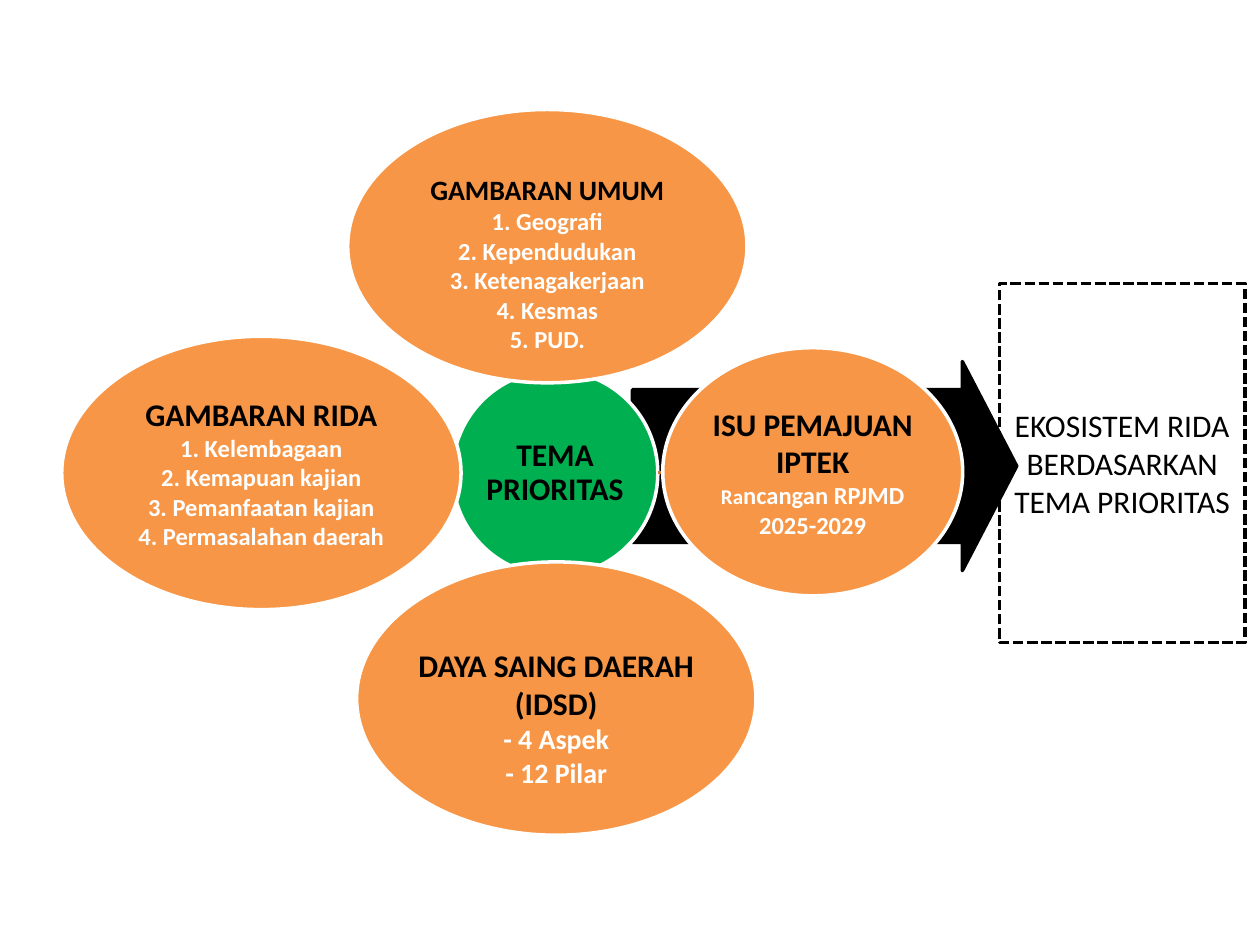
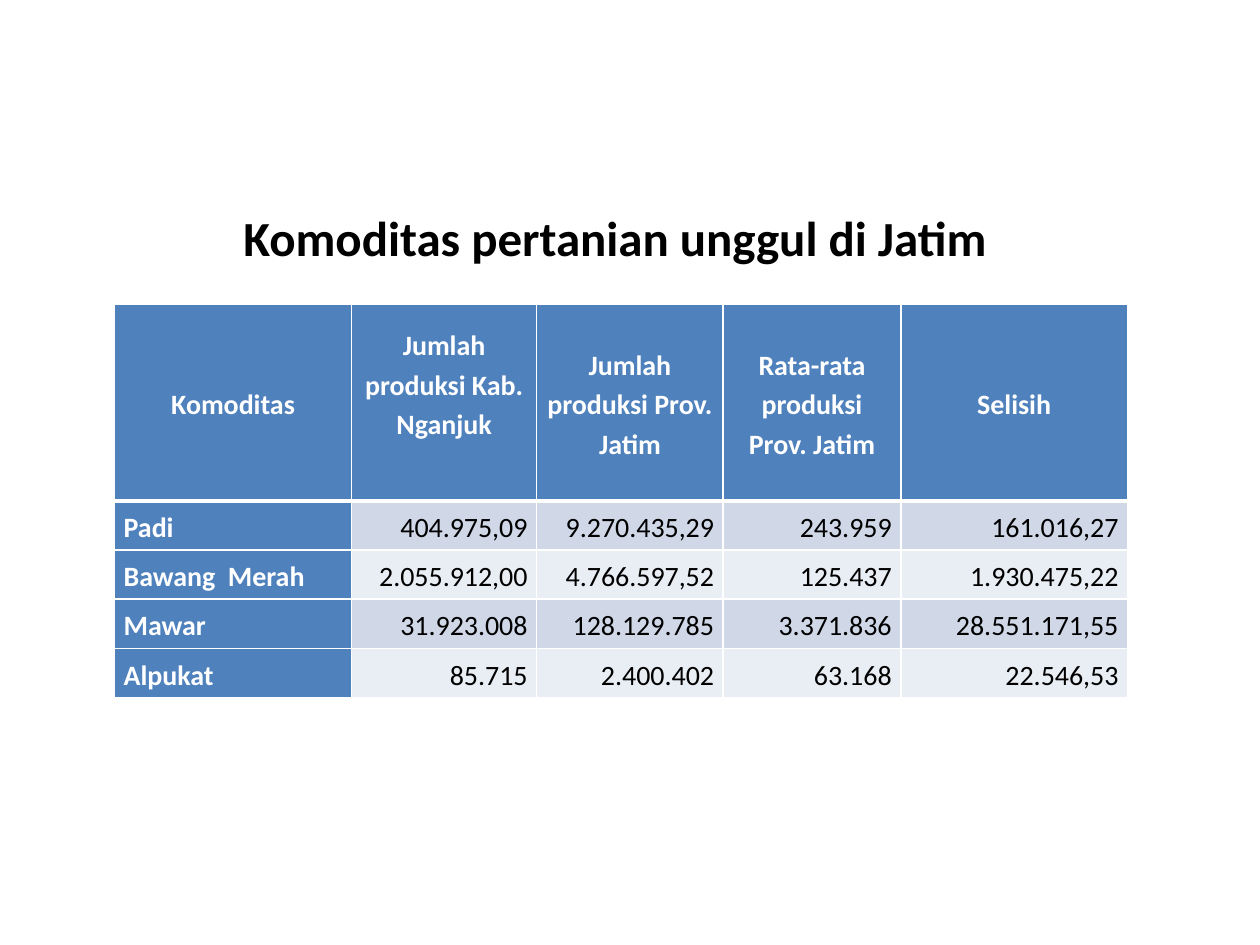
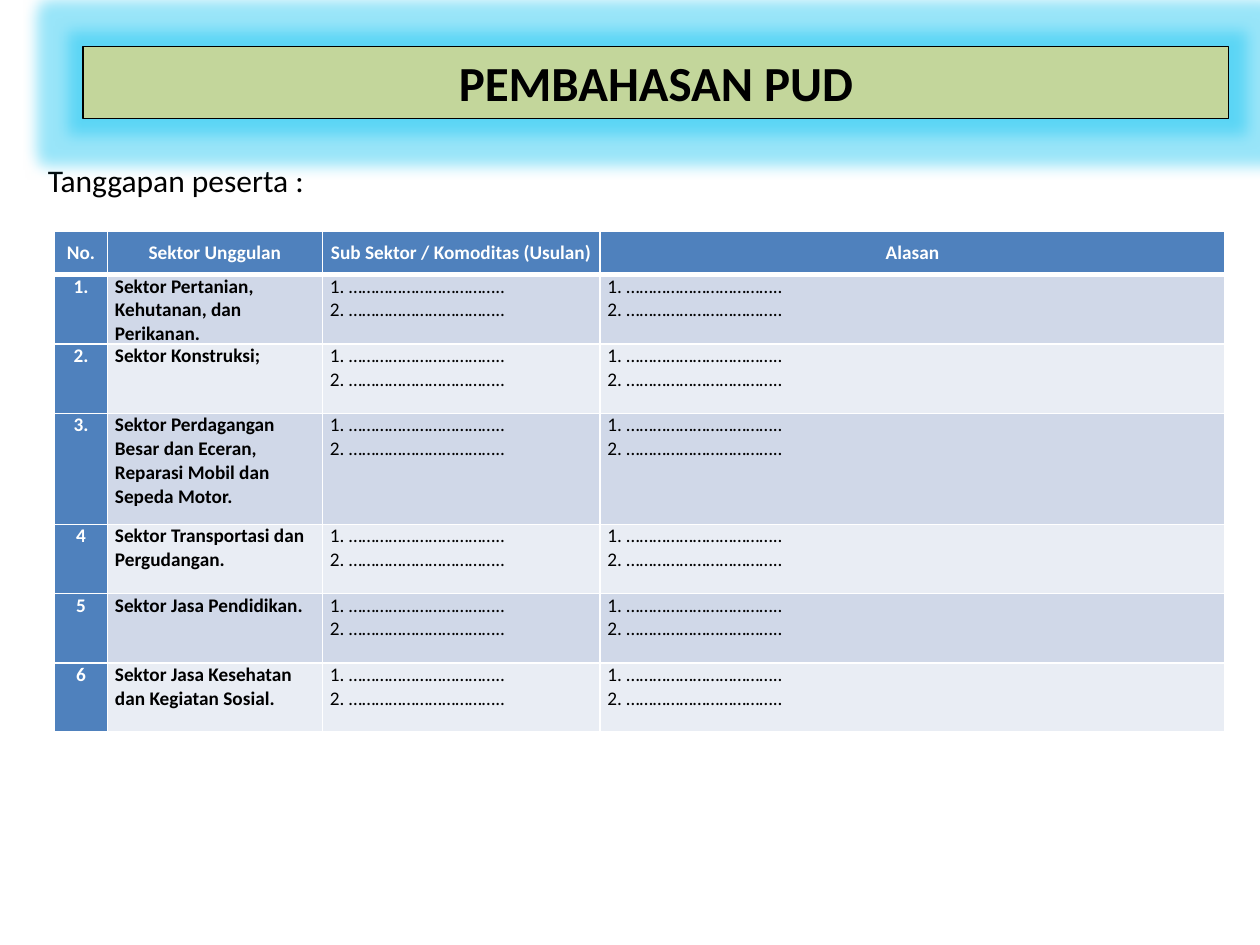
from dataclasses import dataclass
from typing import Any

from lxml import etree
from pptx import Presentation
from pptx import util as u
from pptx.dml.color import RGBColor
from pptx.enum import dml, shapes, text
from pptx.oxml import ns

Pt = u.Pt

# Shared look
FONT = "Calibri"
BLACK = RGBColor(0x00, 0x00, 0x00)
WHITE = RGBColor(0xFF, 0xFF, 0xFF)
ORANGE = RGBColor(0xF7, 0x96, 0x46)
GREEN = RGBColor(0x00, 0xB0, 0x50)
BROWN = RGBColor(0xC6, 0x78, 0x38)
BLUE = RGBColor(0x4F, 0x81, 0xBD)
BAND_DARK = RGBColor(0xD0, 0xD8, 0xE8)
BAND_LIGHT = RGBColor(0xE9, 0xED, 0xF4)
OLIVE = RGBColor(0xC3, 0xD6, 0x9B)
GLOW = RGBColor(0x00, 0xBF, 0xF0)

LEFT, CENTER, RIGHT = (text.PP_ALIGN.LEFT, text.PP_ALIGN.CENTER, text.PP_ALIGN.RIGHT)
TOP, MIDDLE = text.MSO_ANCHOR.TOP, text.MSO_ANCHOR.MIDDLE
SHAPE = shapes.MSO_SHAPE
TITLE_SIZE = 28


@dataclass(frozen=True)
class Box:
    left: float
    top: float
    width: float
    height: float

    def lengths(self) -> tuple:
        return Pt(self.left), Pt(self.top), Pt(self.width), Pt(self.height)


@dataclass(frozen=True)
class Run:
    words: str
    size: float
    color: RGBColor = BLACK
    bold: bool = True


@dataclass(frozen=True)
class Line:
    runs: tuple
    align: Any = CENTER
    spacing: float = 1.0


@dataclass(frozen=True)
class Bubble:
    box: Box
    color: RGBColor
    lines: tuple
    link: tuple = ()  # start x, start y, end x, end y
    top_inset: float = 0.72


@dataclass(frozen=True)
class CellStyle:
    size: float
    side_inset: float
    spacing: float
    body_anchor: Any
    aligns: tuple
    bold_columns: int


def line(words: str, size: float, color: RGBColor = BLACK, bold: bool = True,
         align: Any = CENTER, spacing: float = 1.0) -> Line:
    return Line((Run(words, size, color, bold),), align, spacing)


def apply(target: Any, values: dict) -> None:
    for name, value in values.items():
        setattr(target, name, value)


def write(frame: Any, lines: tuple, **frame_values: Any) -> None:
    apply(frame, {"word_wrap": True, **frame_values})
    for index, item in enumerate(lines):
        paragraph = frame.add_paragraph() if index else frame.paragraphs[0]
        apply(paragraph, {"alignment": item.align, "line_spacing": item.spacing})
        for part in item.runs:
            run = paragraph.add_run()
            run.text = part.words
            apply(run.font, {"name": FONT, "size": Pt(part.size), "bold": part.bold})
            run.font.color.rgb = part.color


def add_shape(slide: Any, kind: Any, box: Box, fill: RGBColor,
              outline: RGBColor, weight: float) -> Any:
    shape = slide.shapes.add_shape(kind, *box.lengths())
    shape.shadow.inherit = False
    shape.fill.solid()
    shape.fill.fore_color.rgb = fill
    shape.line.color.rgb = outline
    shape.line.width = Pt(weight)
    return shape


def add_text(slide: Any, box: Box, item: Line, wrap: bool = True) -> None:
    text_box = slide.shapes.add_textbox(*box.lengths())
    write(text_box.text_frame, (item,), word_wrap=wrap)


def add_link(slide: Any, ends: tuple) -> None:
    connector = slide.shapes.add_connector(
        shapes.MSO_CONNECTOR.STRAIGHT, *(Pt(value) for value in ends))
    connector.line.color.rgb = BROWN
    connector.line.width = Pt(2)
    etree.SubElement(connector._element.spPr, ns.qn("a:effectLst"))


def add_bubble(slide: Any, bubble: Bubble) -> None:
    if bubble.link:
        add_link(slide, bubble.link)
    shape = add_shape(slide, SHAPE.OVAL, bubble.box, bubble.color, WHITE, 2)
    inset = Pt(0.72)
    write(shape.text_frame, bubble.lines, vertical_anchor=MIDDLE,
          margin_left=inset, margin_right=inset, margin_bottom=inset,
          margin_top=Pt(bubble.top_inset))


def add_color(parent: Any, color: RGBColor) -> Any:
    return etree.SubElement(parent, ns.qn("a:srgbClr"), val=str(color))


def add_glow(shape: Any, color: RGBColor, radius: float, opacity: int) -> None:
    effects = shape._element.spPr.find(ns.qn("a:effectLst"))
    glow = etree.SubElement(effects, ns.qn("a:glow"), rad=str(Pt(radius)))
    etree.SubElement(add_color(glow, color), ns.qn("a:alpha"), val=str(opacity * 1000))


def set_borders(cell: Any, widths: dict) -> None:
    properties = cell._tc.get_or_add_tcPr()
    for side, width in widths.items():
        border = etree.SubElement(properties, ns.qn(f"a:ln{side}"), w=str(Pt(width)))
        add_color(etree.SubElement(border, ns.qn("a:solidFill")), WHITE)


def add_table(slide: Any, box: Box, widths: tuple, heights: tuple,
              rows: tuple, style: CellStyle) -> Any:
    frame = slide.shapes.add_table(len(rows), len(widths), *box.lengths())
    table = frame.table
    for column, width in zip(table.columns, widths):
        column.width = Pt(width)
    for row, height in zip(table.rows, heights):
        row.height = Pt(height)
    for r, values in enumerate(rows):
        for c, value in enumerate(values):
            header, key = r == 0, c == 0
            cell = table.cell(r, c)
            set_borders(cell, {"L": 1, "R": 1, "T": 3 if r == 1 else 1,
                               "B": 3 if header else 1})
            cell.fill.solid()
            band = BAND_DARK if r % 2 else BAND_LIGHT
            cell.fill.fore_color.rgb = BLUE if header or key else band
            apply(cell, {"margin_left": Pt(style.side_inset),
                         "margin_right": Pt(style.side_inset),
                         "margin_top": 0, "margin_bottom": 0,
                         "vertical_anchor": MIDDLE if header else style.body_anchor})
            color = WHITE if header or key else BLACK
            align = CENTER if header else style.aligns[c]
            write(cell.text_frame, tuple(
                line(words, style.size, color, header or c < style.bold_columns,
                     align, style.spacing) for words in value.split("\n")))
    return table


# Slide 1: priority theme diagram
def petal(left: float, top: float, heading: tuple, heading_size: float,
          items: tuple, item_size: float, link: tuple, top_inset: float = 0.72) -> Bubble:
    lines = (*(line(words, heading_size) for words in heading),
             *(line(words, item_size, WHITE) for words in items))
    return Bubble(Box(left, top, 228.2, 156.2), ORANGE, lines, link, top_inset)


BUBBLES = (
    Bubble(Box(258.5, 211.7, 117.4, 117.4), GREEN,
           (line("TEMA PRIORITAS", 18, spacing=0.9),)),
    petal(198.7, 62.6, ("GAMBARAN UMUM",), 16,
          ("1. Geografi", "2. Kependudukan", "3. Ketenagakerjaan",
           "4. Kesmas", "5. PUD."), 14, (315.4, 211.7, 315.4, 218.9), 20),
    Bubble(Box(378.7, 198.7, 171.4, 141.8), ORANGE,
           (line("ISU PEMAJUAN IPTEK", 18),
            Line((Run("Ra", 12, WHITE), Run("ncangan RPJMD", 14, WHITE))),
            line("2025-2029", 14, WHITE)), (375.8, 270, 378.7, 270)),
    petal(203.8, 321.1, ("DAYA SAING DAERAH", "(IDSD)"), 18,
          ("- 4 Aspek", "- 12 Pilar"), 16, (317.5, 328.3, 317.5, 321.1), 22.5),
    petal(35.3, 192.2, ("GAMBARAN RIDA",), 18,
          ("1. Kelembagaan", "2. Kemapuan kajian", "3. Pemanfaatan kajian",
           "4. Permasalahan daerah"), 14, (258.5, 270, 264.2, 270)),
)


def build_theme(slide: Any) -> None:
    ecosystem = add_shape(slide, SHAPE.RECTANGLE, Box(571, 162, 140.4, 205.2),
                          WHITE, BLACK, 2)
    ecosystem.line.dash_style = dml.MSO_LINE.SQUARE_DOT
    write(ecosystem.text_frame,
          (line("EKOSISTEM RIDA BERDASARKAN TEMA PRIORITAS", 18, bold=False),),
          vertical_anchor=MIDDLE)
    arrow = add_shape(slide, SHAPE.RIGHT_ARROW, Box(361.4, 206.6, 219.6, 119.5),
                      BLACK, BLACK, 2)
    arrow.adjustments[0], arrow.adjustments[1] = 0.73, 0.26
    for bubble in BUBBLES:
        add_bubble(slide, bubble)


# Slide 2: leading farm commodities
COMMODITIES = (
    ("Komoditas", "Jumlah produksi Kab. Nganjuk", "Jumlah produksi Prov. Jatim",
     "Rata-rata produksi Prov. Jatim", "Selisih"),
    ("Padi", "404.975,09", "9.270.435,29", "243.959", "161.016,27"),
    ("Bawang  Merah", "2.055.912,00", "4.766.597,52", "125.437", "1.930.475,22"),
    ("Mawar", "31.923.008", "128.129.785", "3.371.836", "28.551.171,55"),
    ("Alpukat", "85.715", "2.400.402", "63.168", "22.546,53"),
)


def build_commodities(slide: Any) -> None:
    style = CellStyle(16, 5.2, 1.15, MIDDLE, (LEFT,) + (RIGHT,) * 4, 1)
    table = add_table(slide, Box(65.5, 173.9, 578.9, 224.6),
                      (135.4, 105.8, 106.6, 101.5, 129.6),
                      (112.3,) + (28.1,) * 4, COMMODITIES, style)
    table.cell(0, 1).margin_bottom = Pt(22.4)
    add_text(slide, Box(54, 115.2, 594.7, 41),
             line("Komoditas pertanian unggul di Jatim", TITLE_SIZE))


# Slide 3: participants' responses
BLANKS = "\n".join(f"{number}. …………………………….." for number in (1, 2))
SECTORS = (
    ("1.", "Sektor Pertanian, Kehutanan, dan Perikanan."),
    ("2.", "Sektor Konstruksi;"),
    ("3.", "Sektor Perdagangan Besar dan Eceran, Reparasi Mobil dan Sepeda Motor."),
    ("4", "Sektor Transportasi dan Pergudangan."),
    ("5", "Sektor Jasa Pendidikan."),
    ("6", "Sektor Jasa Kesehatan dan Kegiatan Sosial."),
)


def build_responses(slide: Any) -> None:
    add_text(slide, Box(20.2, 88.6, 680.4, 29),
             line("Tanggapan peserta :", 18, bold=False, align=LEFT), wrap=False)
    rows = (("No.", "Sektor Unggulan", "Sub Sektor / Komoditas (Usulan)", "Alasan"),
            *((*sector, BLANKS, BLANKS) for sector in SECTORS))
    style = CellStyle(11, 4.3, 1.0, TOP, (CENTER, LEFT, LEFT, LEFT), 2)
    add_table(slide, Box(31.2, 132, 668.9, 286.6), (30.2, 122.8, 158.6, 357.3),
              (25,) + (39.6,) * 2 + (63.4,) + (39.6,) * 3, rows, style)
    banner = add_shape(slide, SHAPE.RECTANGLE, Box(47.5, 26.4, 654.5, 41.2),
                       OLIVE, BLACK, 0.75)
    add_glow(banner, GLOW, 18, 40)
    write(banner.text_frame, (line("PEMBAHASAN PUD", TITLE_SIZE),),
          vertical_anchor=TOP)


def main() -> None:
    presentation = Presentation()
    apply(presentation, {"slide_width": Pt(720), "slide_height": Pt(540)})
    for build in (build_theme, build_commodities, build_responses):
        build(presentation.slides.add_slide(presentation.slide_layouts[6]))
    presentation.save("out.pptx")


if __name__ == "__main__":
    main()
